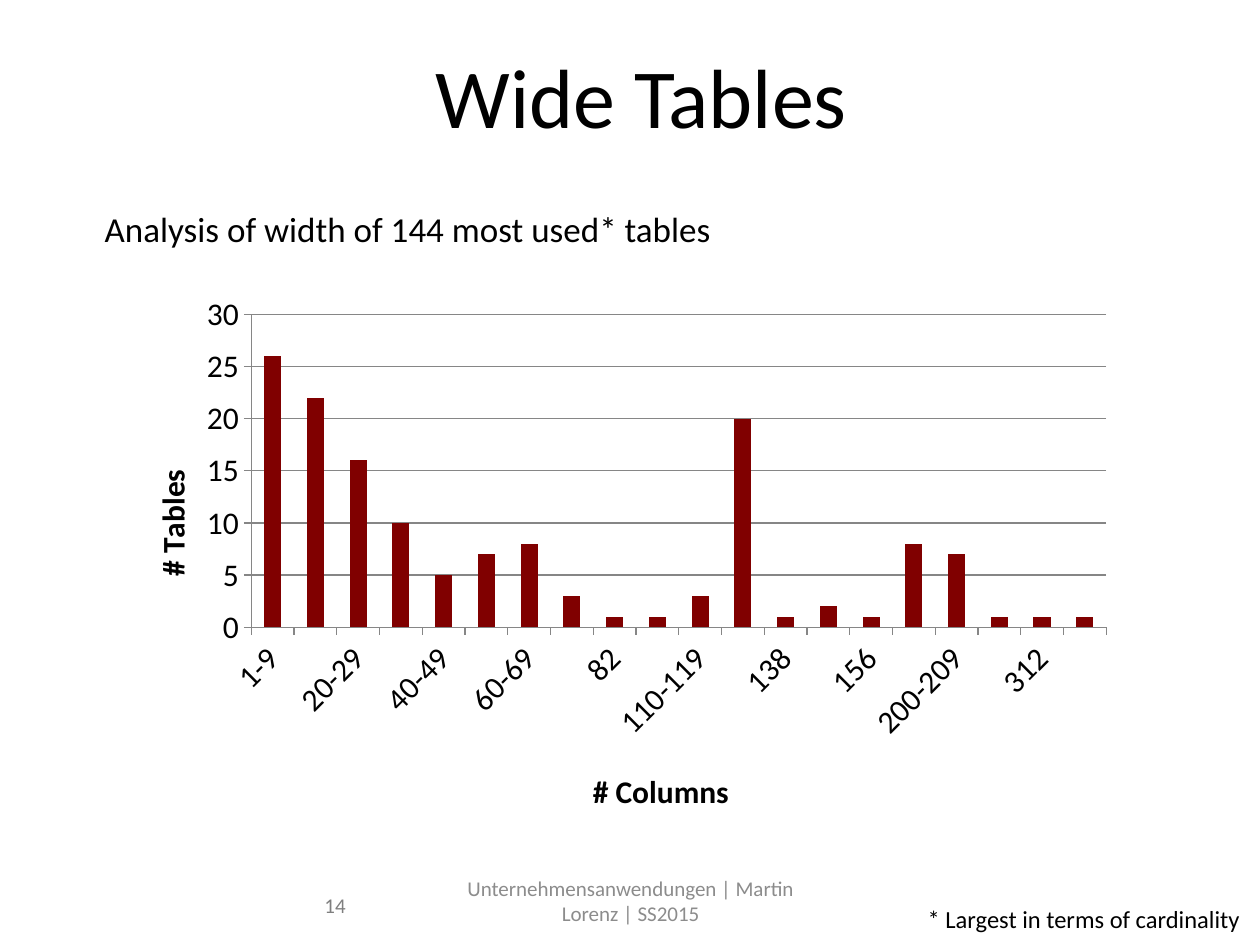
from dataclasses import dataclass

from lxml import etree
from pptx import Presentation
from pptx.chart.data import CategoryChartData
from pptx.dml.color import RGBColor
from pptx.enum.chart import XL_CHART_TYPE, XL_TICK_MARK
from pptx.enum.text import MSO_ANCHOR, MSO_AUTO_SIZE, PP_ALIGN
from pptx.oxml.ns import qn
from pptx.util import Cm, Length, Pt

COLUMNS = XL_CHART_TYPE.COLUMN_CLUSTERED
TICK_OUT, TICK_NONE = XL_TICK_MARK.OUTSIDE, XL_TICK_MARK.NONE
LEFT, CENTER, RIGHT = PP_ALIGN.LEFT, PP_ALIGN.CENTER, PP_ALIGN.RIGHT
MIDDLE = MSO_ANCHOR.MIDDLE
NO_AUTOFIT = MSO_AUTO_SIZE.NONE
DEGREE = 60000  # DrawingML angle units


@dataclass(frozen=True)
class Theme:
    font: str = "Calibri"
    ink: RGBColor = RGBColor(0x00, 0x00, 0x00)
    page_number: RGBColor = RGBColor(0x7F, 0x7F, 0x7F)
    footer: RGBColor = RGBColor(0x8C, 0x8C, 0x8C)
    bar: RGBColor = RGBColor(0x80, 0x00, 0x00)
    grid: RGBColor = RGBColor(0x86, 0x86, 0x86)
    title_size: Length = Pt(48)
    body_size: Length = Pt(20)
    axis_size: Length = Pt(18)
    note_size: Length = Pt(14)
    footer_size: Length = Pt(12)


@dataclass(frozen=True)
class Box:
    left: Length
    top: Length
    width: Length
    height: Length


@dataclass(frozen=True)
class Label:
    text: str
    box: Box
    size: Length
    color: RGBColor
    align: PP_ALIGN = LEFT
    inset: bool = True


THEME = Theme()
TITLE = Label("Wide Tables", Box(Cm(1.5), Cm(0.33), Cm(22.86), Cm(3.18)),
              THEME.title_size, THEME.ink, CENTER)
SUBTITLE = Label("Analysis of width of 144 most used* tables",
                 Box(Cm(2.11), Cm(3.6), Cm(19.8), Cm(2)),
                 THEME.body_size, THEME.ink, inset=False)
SMALL_PRINT = (
    Label("* Largest in terms of cardinality",
          Box(Cm(18.7), Cm(17.53), Cm(7.2), Cm(2)),
          THEME.note_size, THEME.ink, inset=False),
    Label("14", Box(Cm(1.3), Cm(17.73), Cm(5.92), Cm(1.02)),
          THEME.footer_size, THEME.page_number, RIGHT),
    Label("Unternehmensanwendungen | Martin Lorenz | SS2015",
          Box(Cm(8.69), Cm(17.65), Cm(8.05), Cm(1.02)),
          THEME.footer_size, THEME.footer, CENTER),
)
CHART_BOX = Box(Cm(2.31), Cm(5.72), Cm(20.4), Cm(11))
TABLES_BY_WIDTH = {
    "1-9": 26, "10-19": 22, "20-29": 16, "30-39": 10, "40-49": 5,
    "50-59": 7, "60-69": 8, "70-79": 3, "82": 1, "99": 1,
    "110-119": 3, "120-129": 20, "138": 1, "140-149": 2, "156": 1,
    "180-189": 8, "200-209": 7, "230": 1, "312": 1, "399": 1,
}


def style_font(font, size: Length, color: RGBColor, bold: bool = False) -> None:
    font.name, font.size, font.bold = THEME.font, size, bold
    font.color.rgb = color


def fill_label(shape, label: Label) -> None:
    box = label.box
    shape.left, shape.top = box.left, box.top
    shape.width, shape.height = box.width, box.height
    frame = shape.text_frame
    frame.text = label.text
    frame.word_wrap = True
    frame.auto_size = NO_AUTOFIT
    frame.vertical_anchor = MIDDLE
    if not label.inset:
        frame.margin_left = frame.margin_right = Cm(0)
        frame.margin_top = frame.margin_bottom = Cm(0)
    paragraph = frame.paragraphs[0]
    paragraph.alignment = label.align
    paragraph.space_before = Pt(0)
    style_font(paragraph.runs[0].font, label.size, label.color)


def add_label(slide, label: Label) -> None:
    box = label.box
    fill_label(slide.shapes.add_textbox(box.left, box.top, box.width, box.height), label)


def remove_bullet(paragraph) -> None:
    properties = paragraph._p.get_or_add_pPr()
    properties.set("marL", "0")
    properties.set("indent", "0")
    etree.SubElement(properties, qn("a:buNone"))


def manual_layout(**settings: object):
    """Build a c:layout whose positions are fractions of the chart area."""
    layout = etree.Element(qn("c:layout"))
    manual = etree.SubElement(layout, qn("c:manualLayout"))
    for tag, value in settings.items():
        etree.SubElement(manual, qn(f"c:{tag}")).set("val", str(value))
    return layout


def style_axis(axis, title: str, x: float, y: float, title_angle: int) -> None:
    axis.has_title = True
    frame = axis.axis_title.text_frame
    frame.text = title
    style_font(frame.paragraphs[0].runs[0].font, THEME.axis_size, THEME.ink, bold=True)
    title_xml = axis.axis_title._element
    title_xml.find(".//" + qn("a:bodyPr")).set("rot", str(title_angle * DEGREE))
    for old in title_xml.findall(qn("c:layout")):
        title_xml.remove(old)
    title_xml.find(qn("c:tx")).addnext(
        manual_layout(xMode="edge", yMode="edge", x=x, y=y))
    style_font(axis.tick_labels.font, THEME.axis_size, THEME.ink)
    axis.major_tick_mark, axis.minor_tick_mark = TICK_OUT, TICK_NONE
    axis.format.line.color.rgb = THEME.grid


def add_width_chart(slide) -> None:
    data = CategoryChartData()
    data.categories = list(TABLES_BY_WIDTH)
    data.add_series("Series 1", list(TABLES_BY_WIDTH.values()))
    box = CHART_BOX
    chart = slide.shapes.add_chart(
        COLUMNS, box.left, box.top, box.width, box.height, data).chart
    chart.has_legend = chart.has_title = False
    style_font(chart.font, THEME.axis_size, THEME.ink)

    plot = chart.plots[0]
    plot.vary_by_categories = False
    plot.gap_width = 150
    fill = plot.series[0].format.fill
    fill.solid()
    fill.fore_color.rgb = THEME.bar

    widths, counts = chart.category_axis, chart.value_axis
    style_axis(widths, "# Columns", 0.467, 0.88, 0)
    style_axis(counts, "# Tables", 0.03, 0.33, -90)
    widths.has_major_gridlines = False
    counts.has_major_gridlines = True
    counts.major_gridlines.format.line.color.rgb = THEME.grid
    counts.minimum_scale, counts.maximum_scale, counts.major_unit = 0, 30, 5

    axis_xml = widths._element
    axis_xml.find(qn("c:txPr")).find(qn("a:bodyPr")).set("rot", str(-45 * DEGREE))
    label_skip = etree.Element(qn("c:tickLblSkip"))
    label_skip.set("val", "2")
    axis_xml.find(qn("c:noMultiLvlLbl")).addprevious(label_skip)

    plot_area = axis_xml.getparent()
    for old in plot_area.findall(qn("c:layout")):
        plot_area.remove(old)
    plot_area.insert(0, manual_layout(
        layoutTarget="inner", xMode="edge", yMode="edge",
        x=0.135, y=0.056, w=0.845, h=0.574))


def main() -> None:
    presentation = Presentation()
    presentation.slide_width, presentation.slide_height = Cm(25.4), Cm(19.05)
    slide = presentation.slides.add_slide(presentation.slide_layouts[1])
    fill_label(slide.shapes.title, TITLE)
    subtitle = slide.placeholders[1]
    fill_label(subtitle, SUBTITLE)
    remove_bullet(subtitle.text_frame.paragraphs[0])
    add_width_chart(slide)
    for label in SMALL_PRINT:
        add_label(slide, label)
    presentation.save("out.pptx")


if __name__ == "__main__":
    main()
